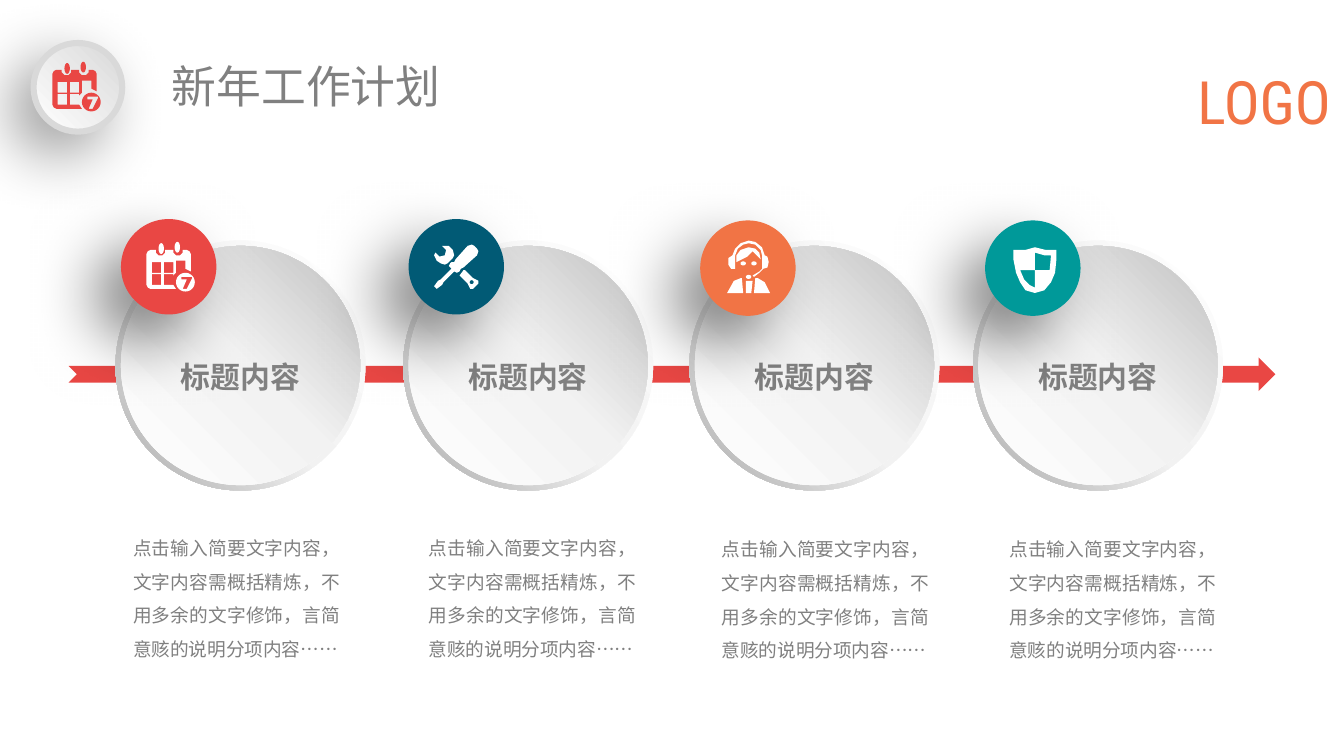
from math import cos, pi, sin

from lxml.etree import SubElement
from pptx import Presentation
from pptx.dml.color import RGBColor
from pptx.enum.shapes import MSO_SHAPE
from pptx.enum.text import MSO_ANCHOR, PP_ALIGN
from pptx.oxml import parse_xml
from pptx.oxml.ns import nsdecls, qn
from pptx.util import Inches, Pt

COLORS = {"red": "E94744", "navy": "015A75", "orange": "F17445", "teal": "009999",
          "gray": "808080", "ring": "D9D9D9", "white": "FFFFFF", "black": "000000"}
HEADER_STOPS = [(0, "FFFFFF"), (100, "D9D9D9")]
RIM_STOPS = [(0, "FFFFFF"), (55, "F2F2F2"), (100, "A6A6A6")]
FACE_STOPS = [(0, "FFFFFF"), (51, "F2F2F2"), (100, "BFBFBF")]

deck = Presentation()
deck.slide_width = Inches(10)
deck.slide_height = Inches(10) * 9 // 16
page = deck.slides.add_slide(deck.slide_layouts[6])


def add_figure(kind, left, top, width, height, color=None, stops=None, angle=0, shadow=None):
    """Add a preset shape; stops make a gradient, shadow is (opacity, blur, distance)."""
    shape = page.shapes.add_shape(kind, Inches(left), Inches(top), Inches(width), Inches(height))
    shape.line.fill.background()
    shape.shadow.inherit = False
    properties = shape._element.spPr
    if stops:
        marks = "".join(f'<a:gs pos="{at * 1000}"><a:srgbClr val="{tint}"/></a:gs>'
                        for at, tint in stops)
        properties.find(qn("a:prstGeom")).addnext(parse_xml(
            f'<a:gradFill {nsdecls("a")} rotWithShape="1"><a:gsLst>{marks}</a:gsLst>'
            f'<a:lin ang="{angle * 60000}" scaled="0"/></a:gradFill>'))
    else:
        shape.fill.solid()
        shape.fill.fore_color.rgb = RGBColor.from_string(COLORS[color])
    if shadow:
        opacity, blur, distance = shadow
        outer = SubElement(properties.find(qn("a:effectLst")), qn("a:outerShdw"),
                           blurRad=str(Pt(blur)), dist=str(Pt(distance)), dir=str(135 * 60000),
                           algn="tr", rotWithShape="0")
        tint = SubElement(outer, qn("a:srgbClr"), val=COLORS["black"])
        SubElement(tint, qn("a:alpha"), val=str(opacity * 1000))
    return shape


def add_text(words, left, top, width, height, size, color="gray", font="Arial",
             bold=False, align=PP_ALIGN.LEFT, wrap=True):
    box = page.shapes.add_textbox(Inches(left), Inches(top), Inches(width), Inches(height))
    box.text_frame.word_wrap = wrap
    box.text_frame.vertical_anchor = MSO_ANCHOR.TOP
    para = box.text_frame.paragraphs[0]
    para.alignment = align
    span = para.add_run()
    span.text = words
    span.font.size, span.font.name, span.font.bold = Pt(size), font, bold
    span.font.color.rgb = RGBColor.from_string(COLORS[color])
    return box


# Header
logo = add_text("LOGO", 8.81, 0.43, 1.19, 0.64, 32, "orange", "Roboto Condensed")
logo.text_frame.margin_right = 0
add_text("新年工作计划", 1.18, 0.39, 2.58, 0.5, 24)
header = add_figure(MSO_SHAPE.OVAL, 0.25, 0.32, 0.66, 0.66, stops=HEADER_STOPS, angle=315,
                    shadow=(40, 35, 15))
header.line.color.rgb = RGBColor.from_string(COLORS["ring"])
header.line.width = Pt(3.25)

# Timeline: disc left, badge left, badge top, badge colour, description left, description top
steps = [(0.86, 0.9, 1.63, "red", 0.99, 3.91),
         (3, 3.04, 1.63, "navy", 3.19, 3.91),
         (5.13, 5.21, 1.64, "orange", 5.37, 3.92),
         (7.24, 7.33, 1.64, "teal", 7.51, 3.92)]
add_figure(MSO_SHAPE.NOTCHED_RIGHT_ARROW, 0.51, 2.66, 8.98, 0.25, "red")
for disc_left, badge_left, badge_top, color, note_left, note_top in steps:
    note = add_text("点击输入简要文字内容，文字内容需概括精炼，不用多余的文字修饰，言简意赅的说明分项内容……",
                    note_left, note_top, 1.54, 1.01, 10, align=PP_ALIGN.JUSTIFY)
    frame = note.text_frame
    frame.margin_left = frame.margin_right = frame.margin_top = frame.margin_bottom = 0
    frame.paragraphs[0].line_spacing = 1.5
    rim = add_figure(MSO_SHAPE.DONUT, disc_left, 1.79, 1.86, 1.86, stops=RIM_STOPS, angle=135)
    rim.adjustments[0] = 0.049
    add_figure(MSO_SHAPE.OVAL, disc_left + 0.04, 1.83, 1.78, 1.78, stops=FACE_STOPS, angle=315)
    add_text("标题内容", disc_left + 0.38, 2.62, 1.1, 0.37, 16, bold=True,
             align=PP_ALIGN.CENTER, wrap=False)
    add_figure(MSO_SHAPE.OVAL, badge_left, badge_top, 0.71, 0.71, color, shadow=(50, 35, 20))

# Icons: a list is an outline of points, a tuple is an ellipse (centre x, centre y, radii).
# An outline inside another one is a hole.
cells = [[(x, y), (x + 0.07, y), (x + 0.07, y + 0.08), (x, y + 0.08)]
         for x, y in [(0.43, 0.61), (0.52, 0.61), (0.43, 0.7)]]
calendar = cells + [
    (0.62, 0.5, 0.02, 0.04), (0.5, 0.51, 0.02, 0.04), (0.68, 0.76, 0.07, 0.07),
    [(0.42, 0.52), (0.46, 0.52), (0.46, 0.54), (0.48, 0.56), (0.51, 0.56), (0.53, 0.54),
     (0.53, 0.52), (0.59, 0.52), (0.59, 0.54), (0.61, 0.56), (0.64, 0.56), (0.66, 0.54),
     (0.66, 0.52), (0.69, 0.52), (0.71, 0.53), (0.72, 0.55), (0.72, 0.68), (0.68, 0.66),
     (0.68, 0.6), (0.61, 0.6), (0.61, 0.69), (0.59, 0.71), (0.59, 0.7), (0.52, 0.7),
     (0.52, 0.78), (0.59, 0.78), (0.61, 0.81), (0.42, 0.81), (0.4, 0.8), (0.39, 0.78),
     (0.39, 0.55), (0.4, 0.53)],
    [(0.65, 0.72), (0.73, 0.72), (0.73, 0.73), (0.69, 0.81), (0.66, 0.81), (0.69, 0.74),
     (0.65, 0.74)]]
tools = [
    [(3.35, 1.94), (3.37, 1.92), (3.38, 1.9), (3.37, 1.86), (3.34, 1.83), (3.29, 1.83),
     (3.32, 1.86), (3.31, 1.9), (3.27, 1.91), (3.24, 1.88), (3.23, 1.9), (3.25, 1.94),
     (3.28, 1.96), (3.31, 1.97), (3.33, 1.96)],
    [(3.45, 2.01), (3.42, 2.05), (3.48, 2.11), (3.5, 2.15), (3.52, 2.15), (3.56, 2.11),
     (3.56, 2.09), (3.52, 2.07), (3.46, 2.01)],
    (3.51, 2.1, 0.015, 0.015),
    [(3.55, 1.85), (3.53, 1.83), (3.51, 1.82), (3.48, 1.83), (3.39, 1.93), (3.38, 1.95),
     (3.36, 1.95), (3.35, 1.96), (3.34, 1.98), (3.36, 2), (3.28, 2.08), (3.26, 2.09),
     (3.23, 2.13), (3.25, 2.15), (3.29, 2.12), (3.3, 2.1), (3.38, 2.02), (3.4, 2.03),
     (3.42, 2.02), (3.43, 2), (3.45, 1.99), (3.55, 1.9), (3.56, 1.87)]]
shield = [
    [(7.54, 1.86), (7.63, 1.86), (7.7, 1.84), (7.78, 1.86), (7.86, 1.86), (7.86, 1.93),
     (7.85, 2.03), (7.82, 2.1), (7.77, 2.16), (7.7, 2.18), (7.63, 2.16), (7.59, 2.1),
     (7.56, 2.03), (7.54, 1.93)],
    [(7.7, 2.01), (7.81, 2.01), (7.82, 1.9), (7.77, 1.9), (7.7, 1.88)],
    [(7.7, 2.14), (7.7, 2.01), (7.59, 2.01), (7.62, 2.08), (7.66, 2.12)]]
operator = [
    [(5.57, 1.79), (5.51, 1.81), (5.47, 1.85), (5.45, 1.9), (5.42, 1.92), (5.42, 1.97),
     (5.44, 2), (5.47, 2), (5.47, 1.9), (5.49, 1.85), (5.53, 1.82), (5.57, 1.81),
     (5.62, 1.82), (5.66, 1.86), (5.67, 1.9), (5.67, 2), (5.65, 2.02), (5.6, 2.05),
     (5.61, 2.06), (5.65, 2.03), (5.68, 2), (5.71, 1.99), (5.72, 1.95), (5.71, 1.91),
     (5.69, 1.9), (5.67, 1.84), (5.62, 1.8)],
    [(5.57, 1.84), (5.51, 1.86), (5.48, 1.9), (5.48, 1.95), (5.56, 1.91), (5.6, 1.87),
     (5.66, 1.93), (5.65, 1.88), (5.62, 1.85)],
    (5.53, 1.96, 0.02, 0.015), (5.61, 1.96, 0.02, 0.015), (5.57, 2.06, 0.02, 0.015),
    [(5.64, 2.07), (5.62, 2.07), (5.61, 2.18), (5.73, 2.18), (5.69, 2.1)],
    [(5.51, 2.07), (5.46, 2.09), (5.41, 2.18), (5.53, 2.18), (5.52, 2.07)],
    [(5.55, 2.09), (5.55, 2.18), (5.59, 2.18), (5.6, 2.09)]]

for outlines, shift_x, shift_y, color in [(calendar, 0, 0, "red"), (calendar, 0.7, 1.34, "white"),
                                          (tools, 0, 0, "white"), (shield, 0, 0, "white"),
                                          (operator, 0, 0, "white")]:
    builder = None
    for outline in outlines:
        if isinstance(outline, tuple):
            x, y, radius_x, radius_y = outline
            outline = [(x + radius_x * cos(turn * pi / 12), y + radius_y * sin(turn * pi / 12))
                       for turn in range(24)]
        points = [(Inches(x + shift_x), Inches(y + shift_y)) for x, y in outline]
        if builder is None:
            builder = page.shapes.build_freeform(*points[0])
        else:
            builder.move_to(*points[0])
        builder.add_line_segments(points[1:], close=True)
    icon = builder.convert_to_shape()
    icon.fill.solid()
    icon.fill.fore_color.rgb = RGBColor.from_string(COLORS[color])
    icon.line.fill.background()
    icon.shadow.inherit = False

deck.save("out.pptx")
